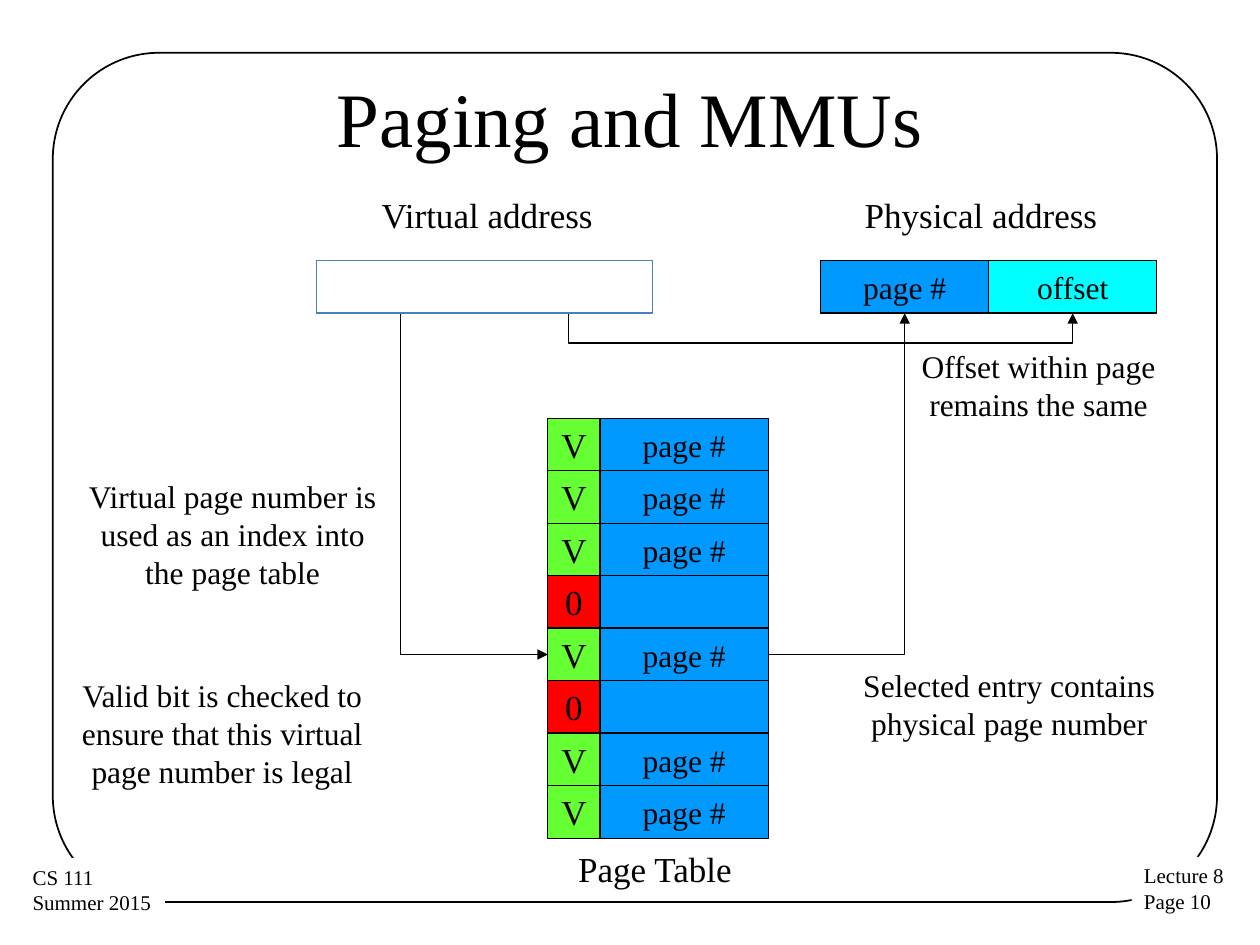
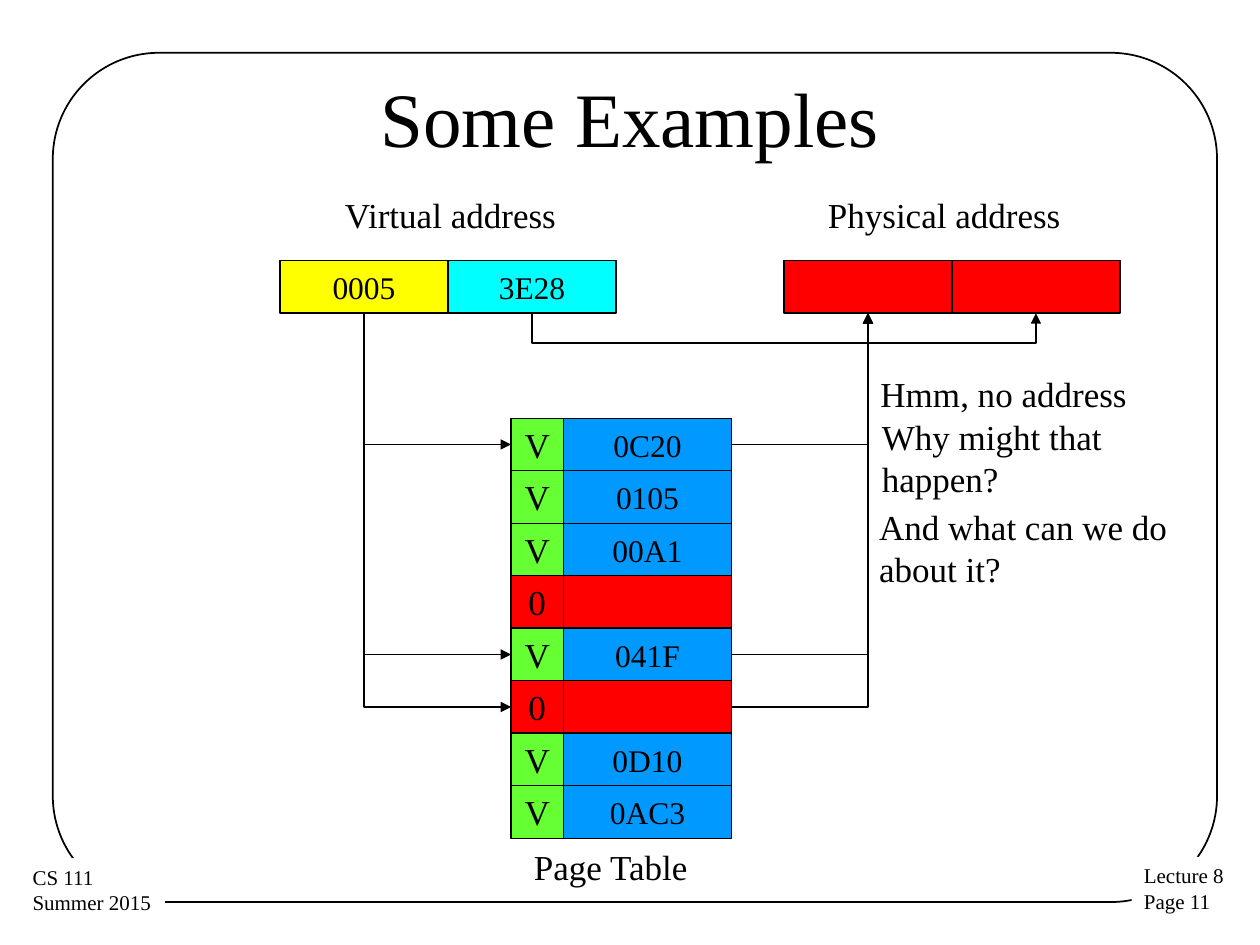
from lxml.etree import SubElement
from pptx import Presentation
from pptx.dml.color import RGBColor
from pptx.enum.shapes import MSO_CONNECTOR, MSO_SHAPE
from pptx.enum.text import MSO_ANCHOR, PP_ALIGN
from pptx.oxml.ns import qn
from pptx.util import Pt

FONT = "Times New Roman"
BLACK, WHITE, RED = "000000", "FFFFFF", "FF0000"
BLUE, CYAN, GREEN, YELLOW, OUTLINE = "0099FF", "00FFFF", "66FF33", "FFFF00", "4B7EBC"
ROW, VALID_W, FIELD_W = 30, 30, 96
TABLE_X, TABLE_Y, PHYSICAL_X = 132, 90, 288
PAGE_X = TABLE_X + VALID_W
TOP = 149


def rgb(color):
    """Turn a hex string into a colour."""
    return RGBColor.from_string(color)


def write(sp, text, size=18, align=PP_ALIGN.LEFT, anchor=MSO_ANCHOR.TOP, wrap=True):
    """Fill a shape with text, one paragraph per line."""
    tf = sp.text_frame
    tf.word_wrap = wrap
    tf.vertical_anchor = anchor
    for i, line in enumerate(text.split("\n")):
        p = tf.add_paragraph() if i else tf.paragraphs[0]
        p.alignment = align
        r = p.add_run()
        r.text = line
        r.font.name, r.font.size = FONT, Pt(size)
        r.font.color.rgb = rgb(BLACK)


def label(s, x, y, w, h, text, **fmt):
    """Add a text box."""
    write(s.shapes.add_textbox(Pt(x), Pt(y), Pt(w), Pt(h)), text, **fmt)


def box(s, x, y, w, h, fill=None, line=BLACK, weight=0.75, kind=MSO_SHAPE.RECTANGLE):
    """Add a preset shape without shadow."""
    sp = s.shapes.add_shape(kind, Pt(x), Pt(y), Pt(w), Pt(h))
    sp.shadow.inherit = False
    if fill:
        sp.fill.solid()
        sp.fill.fore_color.rgb = rgb(fill)
    else:
        sp.fill.background()
    if line:
        sp.line.color.rgb = rgb(line)
        sp.line.width = Pt(weight)
    else:
        sp.line.fill.background()
    return sp


def cell(s, x, y, w, text, fill, size=18):
    """Add one field of an address or of the page table."""
    sp = box(s, x, y, w, ROW, fill)
    if text:
        write(sp, text, size, PP_ALIGN.CENTER, MSO_ANCHOR.MIDDLE, wrap=False)


def elbow(s, x1, y1, x2, y2, down=False, drop=None):
    """Add a bent arrow that leaves downwards or sideways, or dips by drop."""
    if down:
        span, cx, cy = max(y2 - y1, 0.12), (x1 + x2) / 2, (y1 + y2) / 2
        reach = x2 - x1
        x1, x2 = cx + span / 2, cx - span / 2
        y1, y2 = cy - reach / 2, cy + reach / 2
    c = s.shapes.add_connector(MSO_CONNECTOR.ELBOW, Pt(x1), Pt(y1), Pt(x2), Pt(y2))
    c.line.color.rgb = rgb(BLACK)
    c.line.width = Pt(0.75)
    pr = c._element.spPr
    if down:
        pr.find(qn("a:xfrm")).set("rot", "16200000")
    geom = pr.find(qn("a:prstGeom"))
    if drop:
        guides = geom.find(qn("a:avLst"))
        if guides is None:
            guides = SubElement(geom, qn("a:avLst"))
        SubElement(guides, qn("a:gd"), name="adj1", fmla=f"val {round(drop / span * 100000)}")
    else:
        geom.set("prst", "bentConnector2")
    SubElement(pr.find(qn("a:ln")), qn("a:tailEnd"), type="triangle")
    SubElement(pr, qn("a:effectLst"))


def base_slide(prs, title, number):
    """Add a slide with frame, footers and title."""
    s = prs.slides.add_slide(prs.slide_layouts[6])
    frame = box(s, 30.2, 30.2, 665.3, 485.3, weight=1, kind=MSO_SHAPE.ROUNDED_RECTANGLE)
    frame.adjustments[0] = 0.125
    for x, y, w, text in ((646.6, 489.6, 60.5, f"Lecture 8\nPage {number}"),
                          (11.5, 490.3, 82.8, "CS 111\nSummer 2015")):
        write(box(s, x, y, w, 36.7, WHITE, None), text, 12, wrap=False)
    label(s, 36, 21.6, 648, 90, title, size=44, align=PP_ALIGN.CENTER,
          anchor=MSO_ANCHOR.MIDDLE)
    return s


def address(s, x, y, fields):
    """Add an address made of (text, fill) fields side by side."""
    for i, (text, fill) in enumerate(fields):
        cell(s, x + i * FIELD_W, y, FIELD_W, text, fill)


def page_table(s, x, y, pages, invalid_fill):
    """Add the page table; an empty page is an invalid entry."""
    for i, page in enumerate(pages):
        top = y + i * ROW
        cell(s, x + VALID_W, top, FIELD_W, page, BLUE if page else invalid_fill)
        cell(s, x, top, VALID_W, "V" if page else "0", GREEN if page else RED, 20)


def translation(s, x, y, physical, pages, invalid_fill, lookups, caption):
    """Add the labels, physical address, page table and arrows of one lookup diagram."""
    for dx, dy, w, text in ((30, -41.7, 137, "Virtual address"),
                            (306, -41.7, 148, "Physical address"),
                            (*caption, 104, "Page Table")):
        label(s, x + dx, y + dy, w, 32, text, size=20, wrap=False)
    address(s, x + PHYSICAL_X, y, physical)
    page_table(s, x + TABLE_X, y + TABLE_Y, pages, invalid_fill)
    bottom, mid = y + ROW, FIELD_W / 2
    for row in lookups:
        entry = y + TABLE_Y + (row + 0.5) * ROW
        elbow(s, x + mid, bottom, x + TABLE_X, entry, down=True)
        elbow(s, x + PAGE_X + FIELD_W, entry, x + PHYSICAL_X + mid, bottom)
    offset = x + FIELD_W + mid
    elbow(s, offset, bottom, offset + PHYSICAL_X, bottom, down=True, drop=18)


def paging_slide(prs):
    """Build the slide on how the page table is used."""
    s = base_slide(prs, "Paging and MMUs", 10)
    x = 181
    pages = ["" if i in (3, 5) else "page #" for i in range(8)]
    translation(s, x, TOP, [("page #", BLUE), ("offset", CYAN)], pages, BLUE, [4],
                (142.3, 332))
    box(s, x, TOP, 2 * FIELD_W, ROW, WHITE, OUTLINE)
    for nx, ny, w, h, text in (
            (43, 269.3, 180, 73, "Virtual page number is used as an index into the page table"),
            (481, 377, 191.5, 51, "Selected entry contains physical page number"),
            (497.5, 195, 192, 51, "Offset within page remains the same"),
            (31, 383, 192, 73,
             "Valid bit is checked to ensure that this virtual page number is legal")):
        label(s, nx, ny, w, h, text, align=PP_ALIGN.CENTER)


def examples_slide(prs):
    """Build the slide with example lookups."""
    s = base_slide(prs, "Some Examples", 11)
    x = 160
    pages = ["0C20", "0105", "00A1", "", "041F", "", "0D10", "0AC3"]
    translation(s, x, TOP, [("", RED)] * 2, pages, RED, [4, 0, 5], (138, 330.5))
    address(s, x, TOP, [("0005", YELLOW), ("3E28", CYAN)])
    label(s, 496, 209.5, 156, 32, "Hmm, no address", size=20, wrap=False)
    label(s, 496.8, 234, 187, 55, "Why might that happen?", size=20)
    label(s, 495.2, 285.2, 187, 55, "And what can we do about it?", size=20)


def main():
    """Build and save the presentation."""
    prs = Presentation()
    prs.slide_width, prs.slide_height = Pt(720), Pt(540)
    paging_slide(prs)
    examples_slide(prs)
    prs.save("out.pptx")


if __name__ == "__main__":
    main()
